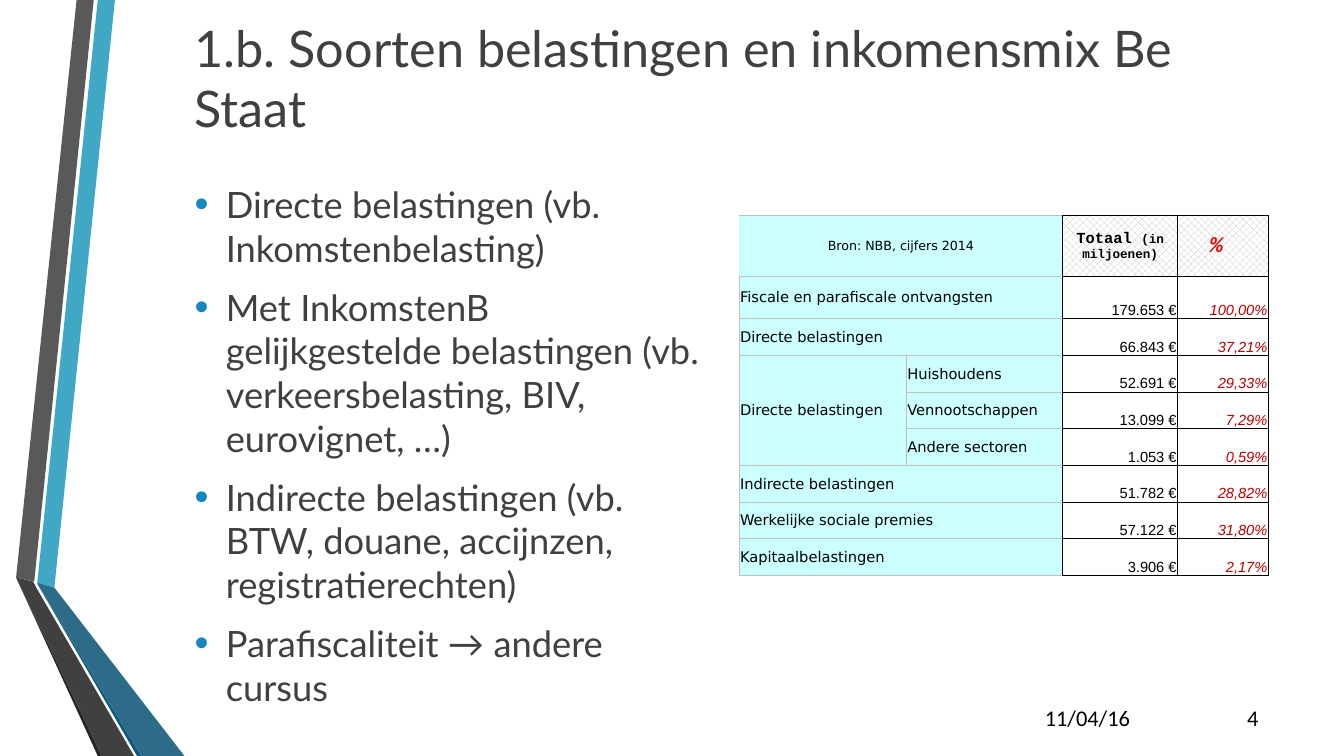
from dataclasses import dataclass
from typing import NamedTuple

from lxml import etree
from pptx import Presentation
from pptx import util as u
from pptx.dml.color import RGBColor
from pptx.enum import dml, text
from pptx.oxml.ns import qn


@dataclass(frozen=True)
class Theme:
    ink: str = "404040"
    black: str = "000000"
    white: str = "FFFFFF"
    bullet: str = "1287C3"
    label_fill: str = "CCFFFF"
    grid: str = "C0C0C0"
    percent: str = "C00000"
    percent_head: str = "DD0806"
    title_size: float = 36
    body_size: float = 25.9
    footer_size: float = 16
    cell_size: float = 10.5
    note_size: float = 9
    total_size: float = 11
    main_font: str = "Lato"
    footer_font: str = "Calibri"
    label_font: str = "DejaVu Sans"
    head_font: str = "Courier New"
    value_font: str = "Arial"


class Ribbon(NamedTuple):
    color: str
    points: list[tuple[float, float]]


class Span(NamedTuple):
    words: str
    font: str
    size: float
    color: str
    bold: bool = False
    italic: bool = False


class Footer(NamedTuple):
    words: str
    left: float
    width: float
    align: text.PP_ALIGN


class TaxRow(NamedTuple):
    group: str
    sector: str
    total: str
    share: str


THEME = Theme()
ALIGN = text.PP_ALIGN
ANCHOR = text.MSO_ANCHOR

RIBBONS = [
    Ribbon("40A8C5", [(0.37, 5.78), (0.54, 5.83), (1.14, 0), (0.97, 0)]),
    Ribbon("595959", [(0.93, 0), (0.76, 0), (0.16, 5.73), (0.34, 5.77)]),
    Ribbon("262626", [(0.16, 5.73), (0.97, 7.5), (1.01, 7.5)]),
    Ribbon("0C5A82", [(0.37, 5.79), (1.36, 7.5), (1.4, 7.5)]),
    Ribbon("2D6C88", [(0.37, 5.79), (1.4, 7.5), (1.83, 7.5), (0.54, 5.83), (0.37, 5.78)]),
    Ribbon("404040", [(1.33, 7.5), (0.36, 5.83), (0.33, 5.77), (0.16, 5.73), (1.01, 7.5)]),
]
TITLE = "1.b. Soorten belastingen en inkomensmix Be Staat"
TOPICS = [
    "Directe belastingen (vb. Inkomstenbelasting)",
    "Met InkomstenB gelijkgestelde belastingen (vb. verkeersbelasting, BIV, eurovignet, …)",
    "Indirecte belastingen (vb. BTW, douane, accijnzen, registratierechten)",
    "Parafiscaliteit → andere cursus",
]
FOOTERS = [
    Footer("11/04/16", 10.16, 1.25, ALIGN.CENTER),
    Footer("4", 11.98, 0.6, ALIGN.RIGHT),
]
TAX_ROWS = [
    TaxRow("Fiscale en parafiscale ontvangsten", "", "179.653 €", "100,00%"),
    TaxRow("Directe belastingen", "", "66.843 €", "37,21%"),
    TaxRow("Directe belastingen", "Huishoudens", "52.691 €", "29,33%"),
    TaxRow("", "Vennootschappen", "13.099 €", "7,29%"),
    TaxRow("", "Andere sectoren", "1.053 €", "0,59%"),
    TaxRow("Indirecte belastingen", "", "51.782 €", "28,82%"),
    TaxRow("Werkelijke sociale premies", "", "57.122 €", "31,80%"),
    TaxRow("Kapitaalbelastingen", "", "3.906 €", "2,17%"),
]
COLUMN_WIDTHS = [1.66, 1.55, 1.14, 0.9]
TABLE_HEIGHT, HEAD_HEIGHT, FIRST_HEIGHT = 3.57, 0.6, 0.42


def place(shape, left: float, top: float, width: float, height: float) -> None:
    shape.left, shape.top = u.Inches(left), u.Inches(top)
    shape.width, shape.height = u.Inches(width), u.Inches(height)


def add_span(para, item: Span) -> None:
    span = para.add_run()
    span.text = item.words
    span.font.name, span.font.size = item.font, u.Pt(item.size)
    span.font.bold, span.font.italic = item.bold, item.italic
    span.font.color.rgb = RGBColor.from_string(item.color)


def draw_ribbon(page, ribbon: Ribbon) -> None:
    start, *rest = [(u.Inches(x), u.Inches(y)) for x, y in ribbon.points]
    builder = page.shapes.build_freeform(*start)
    builder.add_line_segments(rest, close=True)
    shape = builder.convert_to_shape()
    shape.shadow.inherit = False
    shape.fill.solid()
    shape.fill.fore_color.rgb = RGBColor.from_string(ribbon.color)
    shape.line.fill.background()


def draw_title(page) -> None:
    title = page.shapes.title
    place(title, 1.83, 0.39, 10.75, 0.75)
    frame = title.text_frame
    frame.auto_size = text.MSO_AUTO_SIZE.NONE
    frame.vertical_anchor = ANCHOR.MIDDLE
    para = frame.paragraphs[0]
    para.alignment = ALIGN.LEFT
    add_span(para, Span(TITLE, THEME.main_font, THEME.title_size, THEME.ink))


def add_bullet(para) -> None:
    props = para._p.get_or_add_pPr()
    props.set("marL", str(u.Inches(0.31)))
    props.set("indent", str(-u.Inches(0.31)))
    color = etree.SubElement(props, qn("a:buClr"))
    etree.SubElement(color, qn("a:srgbClr"), val=THEME.bullet)
    etree.SubElement(props, qn("a:buSzPct"), val="110000")
    etree.SubElement(props, qn("a:buFont"), typeface="Arial")
    etree.SubElement(props, qn("a:buChar"), char="•")


def draw_topics(page) -> None:
    body = page.placeholders[1]
    place(body, 1.83, 1.76, 5.28, 4.54)
    frame = body.text_frame
    frame.auto_size = text.MSO_AUTO_SIZE.NONE
    frame.vertical_anchor = ANCHOR.TOP
    for index, topic in enumerate(TOPICS):
        para = frame.add_paragraph() if index else frame.paragraphs[0]
        add_bullet(para)
        para.space_before = u.Pt(THEME.body_size * 0.2 if index else 0)
        para.space_after = u.Pt(6)
        add_span(para, Span(topic, THEME.main_font, THEME.body_size, THEME.ink))


def draw_footer(page, footer: Footer) -> None:
    box = page.shapes.add_textbox(0, 0, 0, 0)
    place(box, footer.left, 6.9, footer.width, 0.4)
    frame = box.text_frame
    frame.word_wrap = True
    frame.vertical_anchor = ANCHOR.BOTTOM
    para = frame.paragraphs[0]
    para.alignment = footer.align
    add_span(para, Span(footer.words, THEME.footer_font, THEME.footer_size, THEME.black))


def set_borders(cell, colors: dict[str, str]) -> None:
    props = cell._tc.get_or_add_tcPr()
    for side in "LRTB":
        line = etree.SubElement(props, qn(f"a:ln{side}"), w=str(u.Pt(0.5)))
        if side in colors:
            fill = etree.SubElement(line, qn("a:solidFill"))
            etree.SubElement(fill, qn("a:srgbClr"), val=colors[side])
        else:
            etree.SubElement(line, qn("a:noFill"))


def style_cell(cell, row: int, column: int) -> None:
    is_label = column < 2
    colors = dict.fromkeys("LRTB", THEME.grid if is_label else THEME.black)
    if column == 1 or cell.span_width == 2:
        colors["R"] = THEME.black
    if row == 0 and column == 0:
        del colors["L"]
    set_borders(cell, colors)
    if row == 0 and not is_label:
        cell.fill.patterned()
        cell.fill.pattern = dml.MSO_PATTERN.PERCENT_50
        cell.fill.fore_color.rgb = RGBColor.from_string(THEME.grid)
        cell.fill.back_color.rgb = RGBColor.from_string(THEME.white)
    elif column == 3:
        cell.fill.background()
    else:
        cell.fill.solid()
        cell.fill.fore_color.rgb = RGBColor.from_string(THEME.label_fill if is_label else THEME.white)
    cell.margin_left = cell.margin_right = cell.margin_top = u.Inches(0.01)
    cell.margin_bottom = 0
    cell.vertical_anchor = ANCHOR.MIDDLE if row == 0 or is_label else ANCHOR.BOTTOM


def table_spans() -> list[list[list[Span]]]:
    t = THEME
    head = [
        [Span("Bron: NBB, cijfers 2014", t.label_font, t.note_size, t.black)], [],
        [Span("Totaal ", t.head_font, t.total_size, t.black, True),
         Span("(in miljoenen)", t.head_font, t.note_size, t.black, True)],
        [Span("% ", t.head_font, 16, t.percent_head, True, True)],
    ]
    return [head] + [
        [[Span(words, t.label_font, t.cell_size, t.black)] if words else [] for words in tax[:2]]
        + [[Span(tax.total, t.value_font, t.cell_size, t.black)],
           [Span(tax.share, t.value_font, t.cell_size, t.percent, italic=True)]]
        for tax in TAX_ROWS
    ]


def draw_table(page) -> None:
    content = table_spans()
    frame = page.shapes.add_table(len(content), len(COLUMN_WIDTHS), 0, 0, 0, 0)
    place(frame, 7.33, 2.14, sum(COLUMN_WIDTHS), TABLE_HEIGHT)
    table = frame.table
    table.first_row = table.horz_banding = False
    for column, width in zip(table.columns, COLUMN_WIDTHS):
        column.width = u.Inches(width)
    rest = (TABLE_HEIGHT - HEAD_HEIGHT - FIRST_HEIGHT) / (len(content) - 2)
    heights = [HEAD_HEIGHT, FIRST_HEIGHT] + [rest] * (len(content) - 2)
    for r, (cells, height) in enumerate(zip(content, heights)):
        table.rows[r].height = u.Inches(height)
        if cells[0] and not cells[1]:
            table.cell(r, 0).merge(table.cell(r, 1))
    table.cell(3, 0).merge(table.cell(5, 0))
    for r, cells in enumerate(content):
        for c, spans in enumerate(cells):
            cell = table.cell(r, c)
            style_cell(cell, r, c)
            para = cell.text_frame.paragraphs[0]
            para.alignment = ALIGN.CENTER if r == 0 else ALIGN.LEFT if c < 2 else ALIGN.RIGHT
            for item in spans:
                add_span(para, item)


def main() -> None:
    deck = Presentation()
    deck.slide_width, deck.slide_height = u.Inches(13.33), u.Inches(7.5)
    page = deck.slides.add_slide(deck.slide_layouts[1])
    for ribbon in RIBBONS:
        draw_ribbon(page, ribbon)
    draw_title(page)
    draw_table(page)
    draw_topics(page)
    for footer in FOOTERS:
        draw_footer(page, footer)
    deck.save("out.pptx")


if __name__ == "__main__":
    main()
